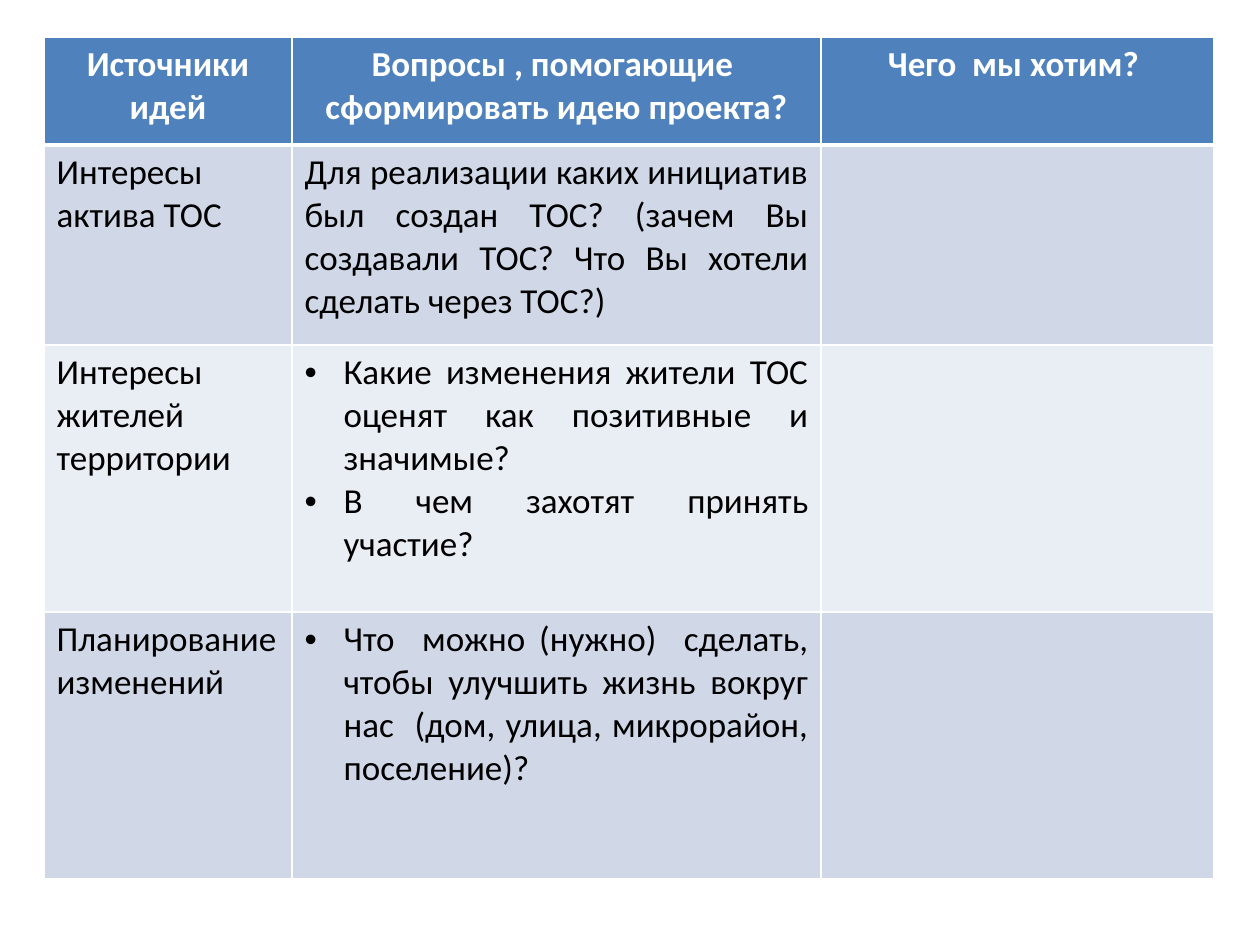
from dataclasses import dataclass

from lxml import etree
from pptx import Presentation
from pptx.dml.color import RGBColor
from pptx.enum.text import PP_ALIGN
from pptx.oxml.ns import qn
from pptx.util import Pt

CENTER = PP_ALIGN.CENTER
JUSTIFY = PP_ALIGN.JUSTIFY
BLANK_LAYOUT = 6
EMU_PER_PX = 914400 / 126
EMU_PER_POINT = 12700


@dataclass(frozen=True)
class Theme:
    font: str = "Calibri"
    text_size: int = 20
    header_text: str = "FFFFFF"
    body_text: str = "000000"
    header_fill: str = "4F81BD"
    band_fills: tuple = ("D0D8E8", "E9EDF4")
    border: str = "FFFFFF"
    thin_border: int = 1
    thick_border: int = 3


THEME = Theme()

TABLE_LEFT, TABLE_TOP = 44, 37
COLUMN_WIDTHS = (248, 529, 393)
ROW_HEIGHTS = (108, 200, 267, 267)
BULLET_INDENT = 39

HEADERS = (
    "Источники идей",
    "Вопросы , помогающие  сформировать идею проекта?",
    "Чего  мы хотим? ",
)
IDEA_ROWS = (
    (
        "Интересы актива ТОС",
        ("Для реализации каких инициатив был создан ТОС? "
         "(зачем Вы создавали ТОС? Что Вы хотели сделать через ТОС?)",),
        False,
    ),
    (
        "Интересы жителей территории",
        ("Какие изменения жители ТОС оценят как позитивные и значимые? ",
         "В чем захотят принять участие?"),
        True,
    ),
    (
        "Планирование изменений",
        ("Что  можно (нужно)  сделать, чтобы улучшить жизнь вокруг нас  "
         "(дом, улица, микрорайон, поселение)?",),
        True,
    ),
)


def px(length):
    return round(length * EMU_PER_PX)


def add_bullet(paragraph):
    properties = paragraph._p.get_or_add_pPr()
    properties.set("marL", str(px(BULLET_INDENT)))
    properties.set("indent", str(-px(BULLET_INDENT)))
    etree.SubElement(properties, qn("a:buFont"), typeface="Arial")
    etree.SubElement(properties, qn("a:buChar"), char="•")


def write_text(paragraph, text, color=THEME.body_text, bold=False,
               alignment=JUSTIFY, bullet=False):
    paragraph.alignment = alignment
    if bullet:
        add_bullet(paragraph)
    run = paragraph.add_run()
    run.text = text
    run.font.name = THEME.font
    run.font.size = Pt(THEME.text_size)
    run.font.bold = bold
    run.font.color.rgb = RGBColor.from_string(color)


def write_cell(cell, texts, **text_format):
    frame = cell.text_frame
    for index, text in enumerate(texts):
        paragraph = frame.add_paragraph() if index else frame.paragraphs[0]
        write_text(paragraph, text, **text_format)


def style_cell(cell, fill, top, bottom):
    properties = cell._tc.get_or_add_tcPr()
    thin = THEME.thin_border
    for side, width in (("L", thin), ("R", thin), ("T", top), ("B", bottom)):
        line = etree.SubElement(properties, qn(f"a:ln{side}"),
                                w=str(width * EMU_PER_POINT))
        solid = etree.SubElement(line, qn("a:solidFill"))
        etree.SubElement(solid, qn("a:srgbClr"), val=THEME.border)
    cell.fill.solid()
    cell.fill.fore_color.rgb = RGBColor.from_string(fill)


def style_table(table):
    thin, thick = THEME.thin_border, THEME.thick_border
    for index, row in enumerate(table.rows):
        fill = THEME.band_fills[(index - 1) % 2] if index else THEME.header_fill
        top = thick if index == 1 else thin
        bottom = thick if index == 0 else thin
        for cell in row.cells:
            style_cell(cell, fill, top, bottom)


def add_ideas_table(slide):
    table = slide.shapes.add_table(
        len(ROW_HEIGHTS), len(COLUMN_WIDTHS), px(TABLE_LEFT), px(TABLE_TOP),
        px(sum(COLUMN_WIDTHS)), px(sum(ROW_HEIGHTS))).table
    for column, width in zip(table.columns, COLUMN_WIDTHS):
        column.width = px(width)
    for row, height in zip(table.rows, ROW_HEIGHTS):
        row.height = px(height)
    style_table(table)

    for index, header in enumerate(HEADERS):
        write_cell(table.cell(0, index), (header,), color=THEME.header_text,
                   bold=True, alignment=CENTER)
    for index, (source, questions, bullet) in enumerate(IDEA_ROWS, start=1):
        write_cell(table.cell(index, 0), (source,))
        write_cell(table.cell(index, 1), questions, bullet=bullet)


def main():
    presentation = Presentation()
    presentation.slide_width = px(1260)
    presentation.slide_height = px(945)
    slide = presentation.slides.add_slide(
        presentation.slide_layouts[BLANK_LAYOUT])
    add_ideas_table(slide)
    presentation.save("out.pptx")


if __name__ == "__main__":
    main()
